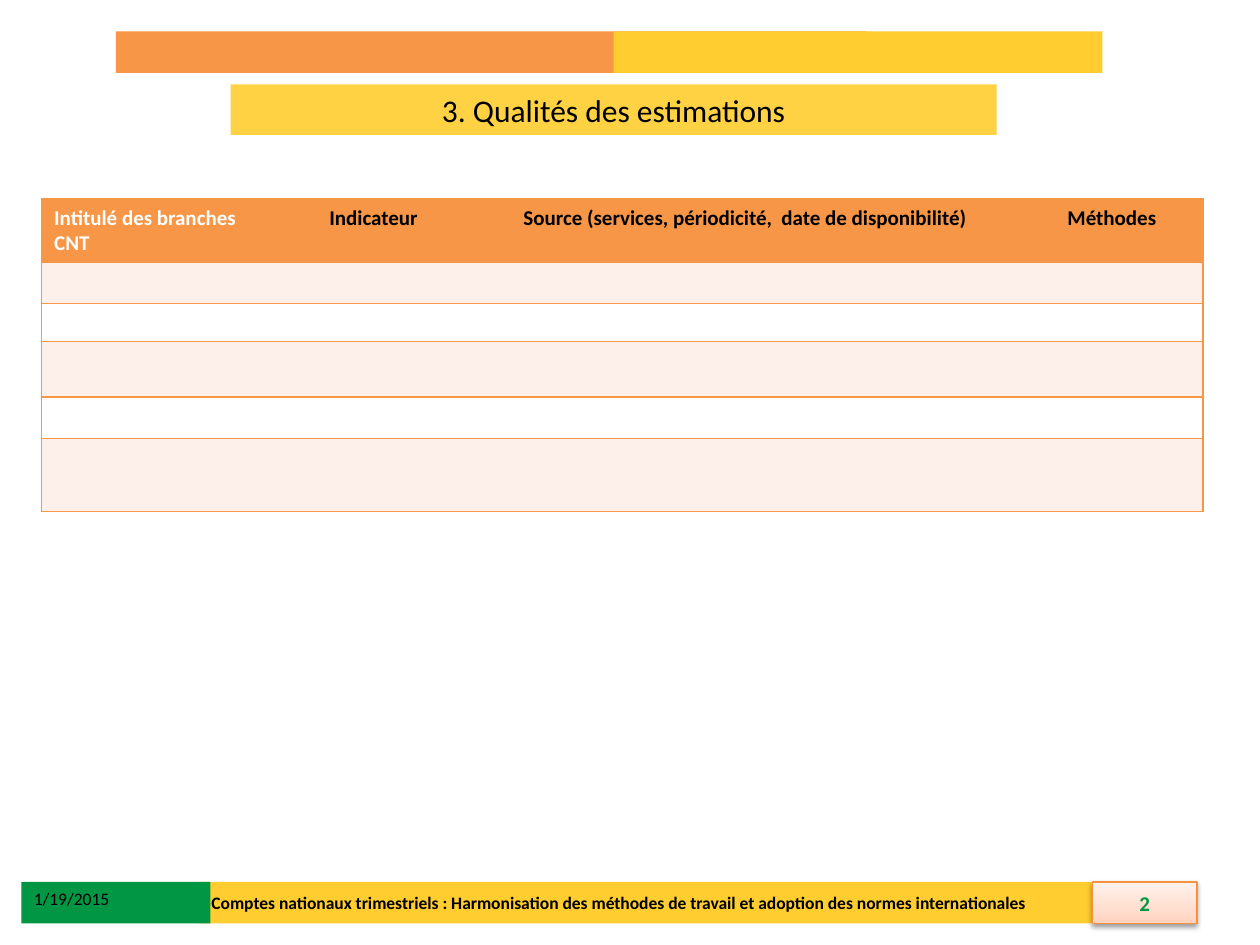
"""Build the slide on the quality of the estimates."""
import copy
import lxml.etree
import pptx
import pptx.dml.color
import pptx.enum.shapes
import pptx.enum.text
import pptx.oxml.ns
import pptx.util

Inches = pptx.util.Inches
Align = pptx.enum.text.PP_ALIGN
Anchor = pptx.enum.text.MSO_ANCHOR
tag = pptx.oxml.ns.qn

COLORS = {
    "orange": "F79646", "yellow": "FFCD2F", "title": "FFD243",
    "green": "009644", "band": "FDEFE9", "white": "FFFFFF",
    "black": "000000", "edge": "F69240",
}
BADGE = [(0, "FFD2BD"), (0.35, "FFDED0"), (1, "FFF2ED")]
HEADS = ["Intitulé des branches CNT", "Indicateur",
         "Source (services, périodicité,  date de disponibilité)", "Méthodes"]
WIDTHS = [1.87, 1.53, 4.37, 1.45]
HEIGHTS = [0.5, 0.33, 0.3, 0.44, 0.33, 0.58]


def paint(name):
    return pptx.dml.color.RGBColor.from_string(COLORS.get(name, name))


def write(frame, text, size=12, color="black", bold=False,
          align=Align.LEFT, anchor=Anchor.TOP, font="Calibri"):
    frame.word_wrap = True
    frame.vertical_anchor = anchor
    para = frame.paragraphs[0]
    para.alignment = align
    run = para.add_run()
    run.text = text
    run.font.name = font
    run.font.size = pptx.util.Pt(size)
    run.font.bold = bold
    run.font.color.rgb = paint(color)


class Deck:
    def __init__(self):
        self.file = pptx.Presentation()
        self.file.slide_width, self.file.slide_height = Inches(10), Inches(7.5)
        self.slide = self.file.slides.add_slide(self.file.slide_layouts[5])

    def title(self, text, box, fill):
        shape = self.slide.shapes.title
        shape.left, shape.top, shape.width, shape.height = map(Inches, box)
        shape.fill.solid()
        shape.fill.fore_color.rgb = paint(fill)
        write(shape.text_frame, text, size=18, align=Align.CENTER)

    def bar(self, box, fill):
        shape = self.slide.shapes.add_shape(
            pptx.enum.shapes.MSO_SHAPE.RECTANGLE, *map(Inches, box))
        shape.shadow.inherit = False
        shape.fill.solid()
        shape.fill.fore_color.rgb = paint(fill)
        shape.line.fill.background()
        return shape

    def badge(self, text, box):
        shape = self.bar(box, "white")
        shape.line.color.rgb = paint("edge")
        shape.line.width = pptx.util.Pt(0.75)
        shape.fill.gradient()
        shape.fill.gradient_angle = 90
        props = shape._element.spPr
        stops = props.find(".//" + tag("a:gsLst"))
        stops.append(copy.deepcopy(stops[0]))
        for stop, (place, color) in zip(shape.fill.gradient_stops, BADGE):
            stop.position = place
            stop.color.rgb = paint(color)
        shade = lxml.etree.SubElement(
            props.find(tag("a:effectLst")), tag("a:outerShdw"),
            blurRad=str(pptx.util.Pt(3.1)), dist=str(pptx.util.Pt(1.6)),
            dir="5400000", rotWithShape="0")
        tint = lxml.etree.SubElement(shade, tag("a:srgbClr"), val=COLORS["black"])
        lxml.etree.SubElement(tint, tag("a:alpha"), val="38000")
        write(shape.text_frame, text, color="green", bold=True,
              align=Align.CENTER, anchor=Anchor.MIDDLE)

    def label(self, text, box, **style):
        shape = self.slide.shapes.add_textbox(*map(Inches, box))
        write(shape.text_frame, text, size=10, **style)

    def border(self, cell, sides):
        props = cell._tc.get_or_add_tcPr()
        for spot, side in enumerate("LRTB"):
            line = lxml.etree.Element(tag("a:ln" + side), w=str(pptx.util.Pt(1)))
            if side in sides:
                fill = lxml.etree.SubElement(line, tag("a:solidFill"))
                lxml.etree.SubElement(fill, tag("a:srgbClr"), val=COLORS["orange"])
            else:
                lxml.etree.SubElement(line, tag("a:noFill"))
            props.insert(spot, line)

    def table(self, left, top):
        table = self.slide.shapes.add_table(
            len(HEIGHTS), len(WIDTHS), Inches(left), Inches(top),
            Inches(sum(WIDTHS)), Inches(sum(HEIGHTS))).table
        table.first_row = table.horz_banding = False
        for col, width in zip(table.columns, WIDTHS):
            col.width = Inches(width)
        for i, height in enumerate(HEIGHTS):
            table.rows[i].height = Inches(height)
            for j, head in enumerate(HEADS):
                cell = table.cell(i, j)
                cell.fill.solid()
                shade = "band" if i % 2 else "white"
                cell.fill.fore_color.rgb = paint(shade if i else "orange")
                ends = {0: "L", len(HEADS) - 1: "R"}
                self.border(cell, "TB" + ends.get(j, ""))
                if i == 0:
                    write(cell.text_frame, head, bold=True,
                          color="black" if j else "white",
                          align=Align.CENTER if j else Align.LEFT)
                else:
                    lxml.etree.SubElement(cell.text_frame.paragraphs[0]._p,
                                          tag("a:endParaRPr"), sz="1200")


def main():
    deck = Deck()
    deck.title("3. Qualités des estimations", (1.83, 0.67, 6.08, 0.4), "title")
    deck.bar((0.92, 0.25, 5.96, 0.33), "orange")
    deck.bar((4.87, 0.25, 3.88, 0.33), "yellow")
    deck.bar((1.58, 7, 7.92, 0.33), "yellow")
    deck.badge("2", (8.67, 7, 0.83, 0.33))
    deck.bar((0.17, 7, 1.5, 0.33), "green")
    deck.label("Comptes nationaux trimestriels : Harmonisation des méthodes "
               "de travail et adoption des normes internationales",
               (1.58, 7, 6.75, 0.33), bold=True, anchor=Anchor.MIDDLE)
    deck.label("1/19/2015", (0.17, 7, 1.42, 0.27))
    deck.table(0.33, 1.58)
    deck.file.save("out.pptx")


if __name__ == "__main__":
    main()
